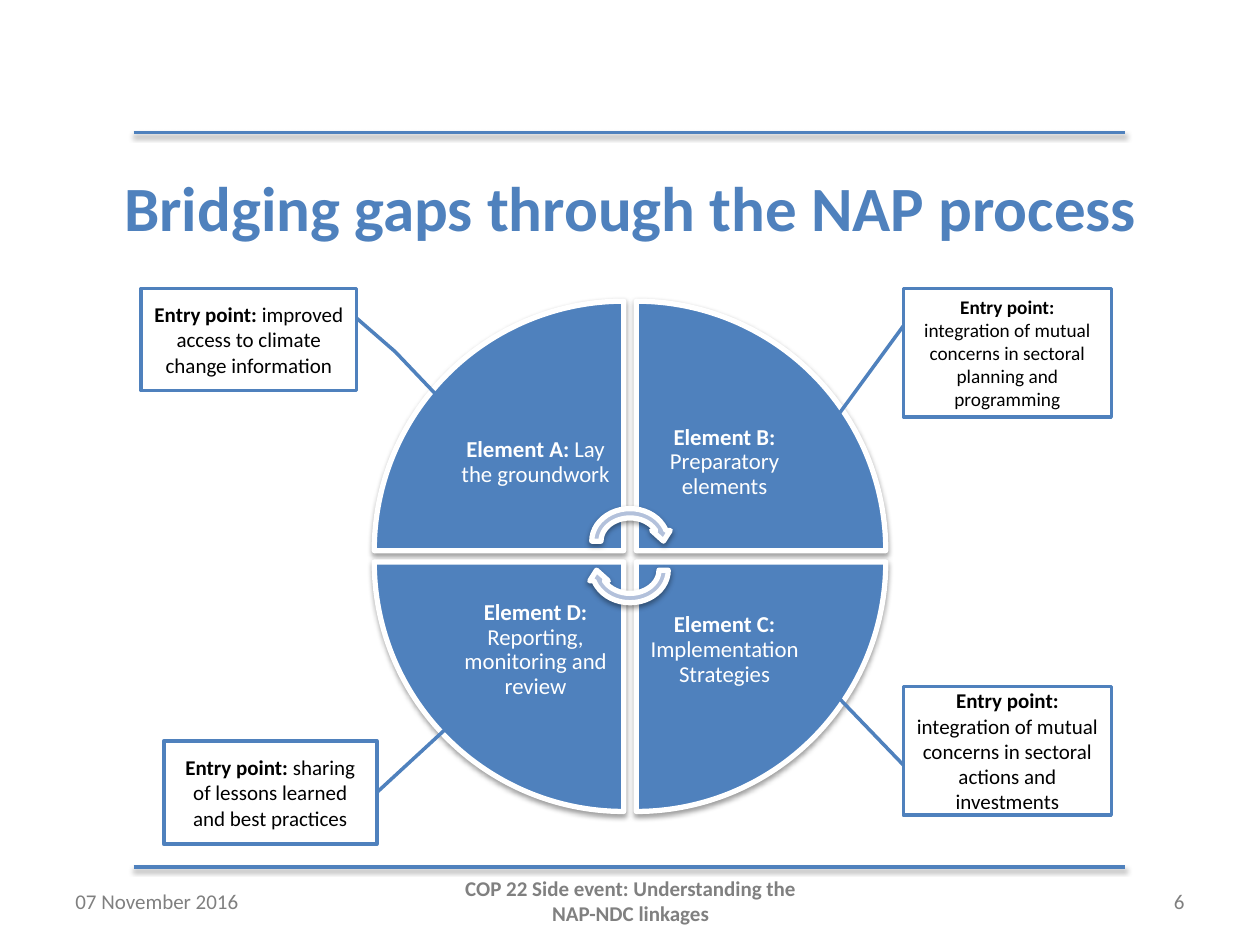
from typing import NamedTuple

from lxml import etree
from pptx import Presentation
from pptx.dml.color import RGBColor
from pptx.enum.shapes import MSO_CONNECTOR, MSO_SHAPE
from pptx.enum.text import MSO_ANCHOR, PP_ALIGN
from pptx.oxml import parse_xml
from pptx.oxml.ns import nsdecls
from pptx.util import Inches, Pt

LEFT, CENTER, RIGHT = PP_ALIGN.LEFT, PP_ALIGN.CENTER, PP_ALIGN.RIGHT
MIDDLE = MSO_ANCHOR.MIDDLE
STRAIGHT = MSO_CONNECTOR.STRAIGHT
PIE_WEDGE, CIRCULAR_ARROW = MSO_SHAPE.PIE_WEDGE, MSO_SHAPE.CIRCULAR_ARROW
ONE_PART_CALLOUT, TWO_PART_CALLOUT = MSO_SHAPE.LINE_CALLOUT_1, MSO_SHAPE.LINE_CALLOUT_2

FONT = "Calibri"
BLUE, PALE_BLUE, WHITE, BLACK, GREY = "4F81BD", "B3C1DB", "FFFFFF", "000000", "808080"
WEDGE_SIZE, LABEL_SIZE = 1.98, 1.4
WEDGE_LEFTS, WEDGE_TOPS = (2.97, 5.05), (2.39, 4.46)


class Box(NamedTuple):
    left: float
    top: float
    width: float
    height: float

    def lengths(self) -> list:
        return [Inches(value) for value in self]


class Element(NamedTuple):
    heading: str
    description: str
    column: int
    row: int


class EntryPoint(NamedTuple):
    description: str
    box: Box
    adjustments: tuple
    size: float = 12
    kind: MSO_SHAPE = ONE_PART_CALLOUT


class FooterItem(NamedTuple):
    text: str
    box: Box
    alignment: PP_ALIGN
    color: str = GREY
    bold: bool = False


# Clockwise from the upper left, so each wedge turns a further 90 degrees.
ELEMENTS = [
    Element("Element A: ", "Lay the groundwork", 0, 0),
    Element("Element B: ", "Preparatory elements", 1, 0),
    Element("Element C: ", "Implementation Strategies", 1, 1),
    Element("Element D: ", "Reporting, monitoring and review", 0, 1),
]
ENTRY_POINTS = [
    EntryPoint("improved access to climate change information",
               Box(1.12, 2.29, 1.71, 0.81),
               (0.29, 1, 0.62, 1.18, 1.13, 1.41), kind=TWO_PART_CALLOUT),
    EntryPoint("integration of mutual concerns in sectoral planning and programming",
               Box(7.17, 2.29, 1.65, 1.02), (0.29, 0, 1.13, -0.38), size=11),
    EntryPoint("integration of mutual concerns in sectoral actions and investments",
               Box(7.17, 5.45, 1.65, 1.02), (0.61, 0, -0.13, -0.44)),
    EntryPoint("sharing of lessons learned and best practices",
               Box(1.3, 5.88, 1.69, 0.82), (0.5, 1, -0.26, 1.4)),
]
FOOTER = [
    FooterItem("07 November 2016", Box(0.5, 6.95, 2.33, 0.4), LEFT),
    FooterItem("COP 22 Side event: Understanding the NAP-NDC linkages",
               Box(3.42, 6.95, 3.17, 0.4), CENTER, bold=True),
    FooterItem("6", Box(7.17, 6.95, 2.33, 0.4), RIGHT, color="7F7F7F"),
]


def rgb(color: str) -> RGBColor:
    return RGBColor.from_string(color)


def add_shadow(shape) -> None:
    """Give a shape or connector a soft shadow below; call after fill and line."""
    effects = parse_xml(f"<a:effectLst {nsdecls('a')}/>")
    shadow = etree.SubElement(
        effects, effects.tag.replace("effectLst", "outerShdw"),
        blurRad=str(Pt(3.1)), dist=str(Pt(1.6)), dir="5400000", rotWithShape="0")
    color = etree.SubElement(shadow, effects.tag.replace("effectLst", "srgbClr"), val=BLACK)
    etree.SubElement(color, effects.tag.replace("effectLst", "alpha"), val="38000")
    shape._element.spPr.append(effects)


def write_text(shape, runs: list, size: float, color: str,
               alignment: PP_ALIGN = CENTER):
    """Fill a shape with one paragraph of (text, bold) runs."""
    frame = shape.text_frame
    frame.word_wrap = True
    frame.vertical_anchor = MIDDLE
    paragraph = frame.paragraphs[0]
    paragraph.alignment = alignment
    for text, bold in runs:
        run = paragraph.add_run()
        run.text = text
        run.font.name = FONT
        run.font.size = Pt(size)
        run.font.bold = bold
        run.font.color.rgb = rgb(color)
    return frame


def add_outlined_shape(slide, kind: MSO_SHAPE, box: Box, fill: str,
                       line: str, line_width: float):
    shape = slide.shapes.add_shape(kind, *box.lengths())
    shape.fill.solid()
    shape.fill.fore_color.rgb = rgb(fill)
    shape.line.color.rgb = rgb(line)
    shape.line.width = Pt(line_width)
    return shape


def add_rule(slide, top: float) -> None:
    rule = slide.shapes.add_connector(
        STRAIGHT, Inches(1.06), Inches(top), Inches(8.93), Inches(top))
    rule.line.color.rgb = rgb(BLUE)
    rule.line.width = Pt(2)
    add_shadow(rule)


def add_cycle_part(slide, kind: MSO_SHAPE, box: Box, fill: str, rotation: float) -> None:
    shape = add_outlined_shape(slide, kind, box, fill, WHITE, 3)
    shape.rotation = rotation
    add_shadow(shape)


def add_element(slide, element: Element, rotation: float) -> None:
    """Draw a wedge and its label, which sits in the wedge's inner corner."""
    left, top = WEDGE_LEFTS[element.column], WEDGE_TOPS[element.row]
    add_cycle_part(slide, PIE_WEDGE, Box(left, top, WEDGE_SIZE, WEDGE_SIZE), BLUE, rotation)
    inset = WEDGE_SIZE - LABEL_SIZE
    label_box = Box(left + inset * (1 - element.column), top + inset * (1 - element.row),
                    LABEL_SIZE, LABEL_SIZE)
    label = slide.shapes.add_textbox(*label_box.lengths())
    frame = write_text(label, [(element.heading, True), (element.description, False)], 13, WHITE)
    frame.margin_top = frame.margin_bottom = Inches(0.1)
    frame.paragraphs[0].line_spacing = 0.9


def add_entry_point(slide, entry: EntryPoint) -> None:
    callout = add_outlined_shape(slide, entry.kind, entry.box, WHITE, BLUE, 2)
    callout.shadow.inherit = False
    for index, value in enumerate(entry.adjustments):
        callout.adjustments[index] = value
    write_text(callout, [("Entry point: ", True), (entry.description, False)], entry.size, BLACK)


def add_footer_item(slide, item: FooterItem) -> None:
    textbox = slide.shapes.add_textbox(*item.box.lengths())
    write_text(textbox, [(item.text, item.bold)], 12, item.color, item.alignment)


def main() -> None:
    presentation = Presentation()
    presentation.slide_width, presentation.slide_height = Inches(10), Inches(7.5)
    slide = presentation.slides.add_slide(presentation.slide_layouts[5])

    for top in (1.05, 6.88):
        add_rule(slide, top)
    title = slide.shapes.title
    title.left, title.top, title.width, title.height = Box(0.5, 1.23, 9.01, 0.81).lengths()
    write_text(title, [("Bridging gaps through the NAP process", True)], 36, BLUE)

    for index, element in enumerate(ELEMENTS):
        add_element(slide, element, 90 * index)
    for top, rotation in ((4, 0), (4.23, 180)):
        add_cycle_part(slide, CIRCULAR_ARROW, Box(4.66, top, 0.68, 0.59), PALE_BLUE, rotation)
    for item in FOOTER:
        add_footer_item(slide, item)
    for entry in ENTRY_POINTS:
        add_entry_point(slide, entry)

    presentation.save("out.pptx")


if __name__ == "__main__":
    main()
